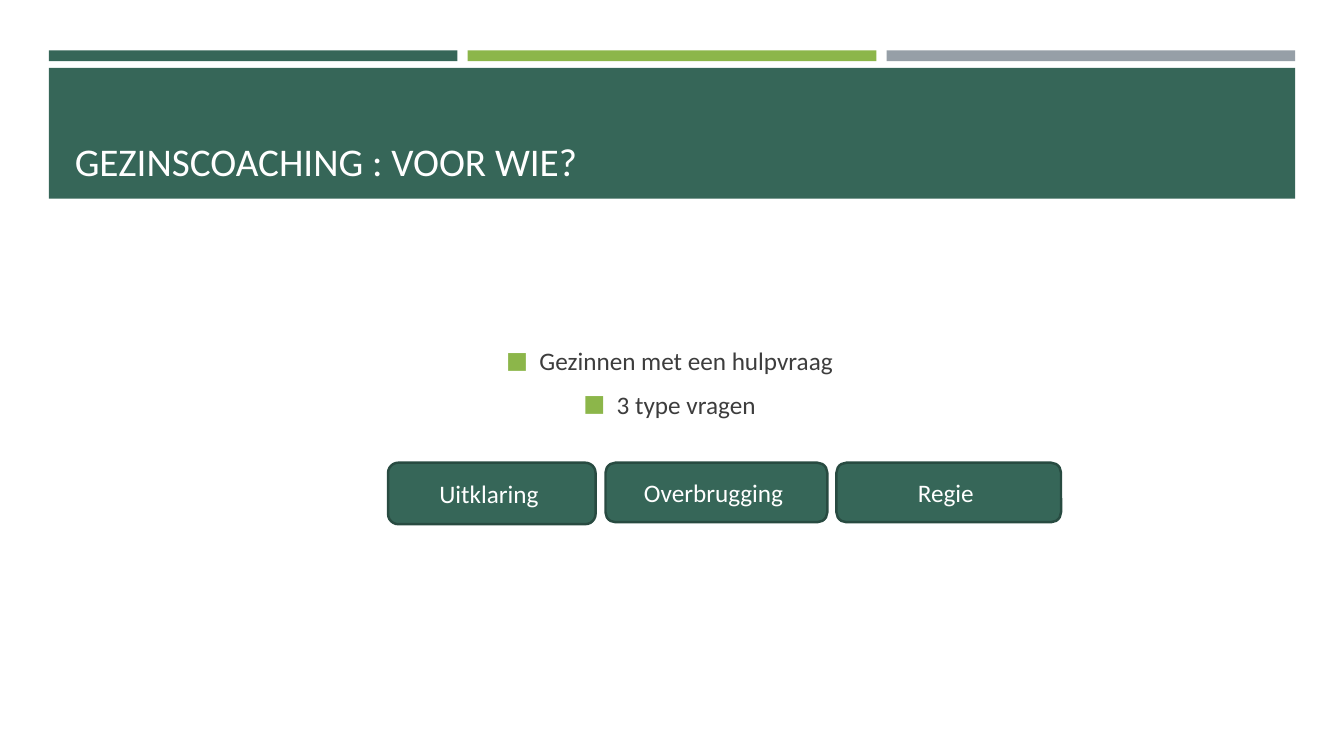
import pptx
import pptx.dml.color
import pptx.enum.shapes
import pptx.enum.text
import pptx.oxml
import pptx.oxml.ns
import pptx.util
from pptx.util import Cm

SHAPE = pptx.enum.shapes.MSO_SHAPE
ANCHOR = pptx.enum.text.MSO_ANCHOR
ALIGN = pptx.enum.text.PP_ALIGN
GREEN, LIME, GREY = "366658", "8CB64A", "969FA7"
DARK_GREEN, WHITE, TEXT = "284B41", "FFFFFF", "3D3D3D"


def color(value):
    return pptx.dml.color.RGBColor.from_string(value)


def write(paragraph, text, size=18, fill=WHITE, align=ALIGN.CENTER, before=0):
    paragraph.alignment = align
    paragraph.space_before = pptx.util.Pt(before)
    paragraph.space_after = pptx.util.Pt(0)
    run = paragraph.add_run()
    run.text = text
    run.font.name = "Calibri"
    run.font.size = pptx.util.Pt(size)
    run.font.color.rgb = color(fill)


def place(shape, left, top, width, height):
    shape.left, shape.top = Cm(left), Cm(top)
    shape.width, shape.height = Cm(width), Cm(height)


def prepare_frame(shape, anchor):
    frame = shape.text_frame
    frame.word_wrap = True
    frame.auto_size = pptx.enum.text.MSO_AUTO_SIZE.NONE
    frame.vertical_anchor = anchor
    return frame


def add_block(slide, kind, left, top, width, height, fill, line=None):
    shape = slide.shapes.add_shape(kind, Cm(left), Cm(top), Cm(width), Cm(height))
    shape.shadow.inherit = False
    shape.fill.solid()
    shape.fill.fore_color.rgb = color(fill)
    if line:
        shape.line.color.rgb = color(line)
        shape.line.width = pptx.util.Pt(1.75)
    else:
        shape.line.fill.background()
    return shape


def add_bullet(paragraph, indent):
    properties = paragraph._p.get_or_add_pPr()
    properties.set("marL", str(Cm(indent)))
    properties.set("indent", str(-Cm(indent)))
    namespace = pptx.oxml.ns.nsdecls("a")
    for xml in (
        f'<a:buClr {namespace}><a:srgbClr val="{LIME}"/></a:buClr>',
        f'<a:buSzPct {namespace} val="92000"/>',
        f'<a:buFont {namespace} typeface="Calibri"/>',
        f'<a:buChar {namespace} char="■"/>',
    ):
        properties.append(pptx.oxml.parse_xml(xml))


def add_header(slide, left, top, width, height):
    gap = 0.26
    bar_width = (width - 2 * gap) / 3
    for index, fill in enumerate((GREEN, LIME, GREY)):
        bar_left = left + index * (bar_width + gap)
        add_block(slide, SHAPE.RECTANGLE, bar_left, top, bar_width, 0.27, fill)
    band_top = top + 0.44
    add_block(slide, SHAPE.RECTANGLE, left, band_top, width, height - 0.44, GREEN)
    title = slide.shapes.title
    title.element.getparent().append(title.element)
    place(title, left + 0.4, band_top + 0.25, width - 0.8, 2.82)
    frame = prepare_frame(title, ANCHOR.BOTTOM)
    write(frame.paragraphs[0], "GEZINSCOACHING : VOOR WIE?", size=28, align=ALIGN.LEFT)


def add_list(slide, left, top, width, height):
    body = slide.placeholders[1]
    place(body, left, top, width, height)
    frame = prepare_frame(body, ANCHOR.MIDDLE)
    frame.margin_bottom = Cm(3.18)
    for index, text in enumerate(("Gezinnen met een hulpvraag ", "3 type vragen ")):
        paragraph = frame.add_paragraph() if index else frame.paragraphs[0]
        write(paragraph, text, fill=TEXT, before=9.6 * index)
        add_bullet(paragraph, 0.84)


def add_question_types(slide, left, top):
    buttons = (
        ("Uitklaring ", 0, 5.23, 1.55),
        ("Overbrugging ", 5.48, 5.59, 1.5),
        ("Regie ", 11.3, 5.66, 1.5),
    )
    for text, offset, width, height in buttons:
        button = add_block(slide, SHAPE.ROUNDED_RECTANGLE, left + offset, top,
                           width, height, GREEN, DARK_GREEN)
        write(prepare_frame(button, ANCHOR.MIDDLE).paragraphs[0], text)


def main():
    presentation = pptx.Presentation()
    presentation.slide_width, presentation.slide_height = Cm(33.87), Cm(19.05)
    slide = presentation.slides.add_slide(presentation.slide_layouts[1])
    add_header(slide, 1.23, 1.27, 31.41, 3.74)
    add_list(slide, 1.63, 6.05, 30.63, 10.21)
    add_question_types(slide, 9.78, 11.66)
    presentation.save("out.pptx")


if __name__ == "__main__":
    main()
